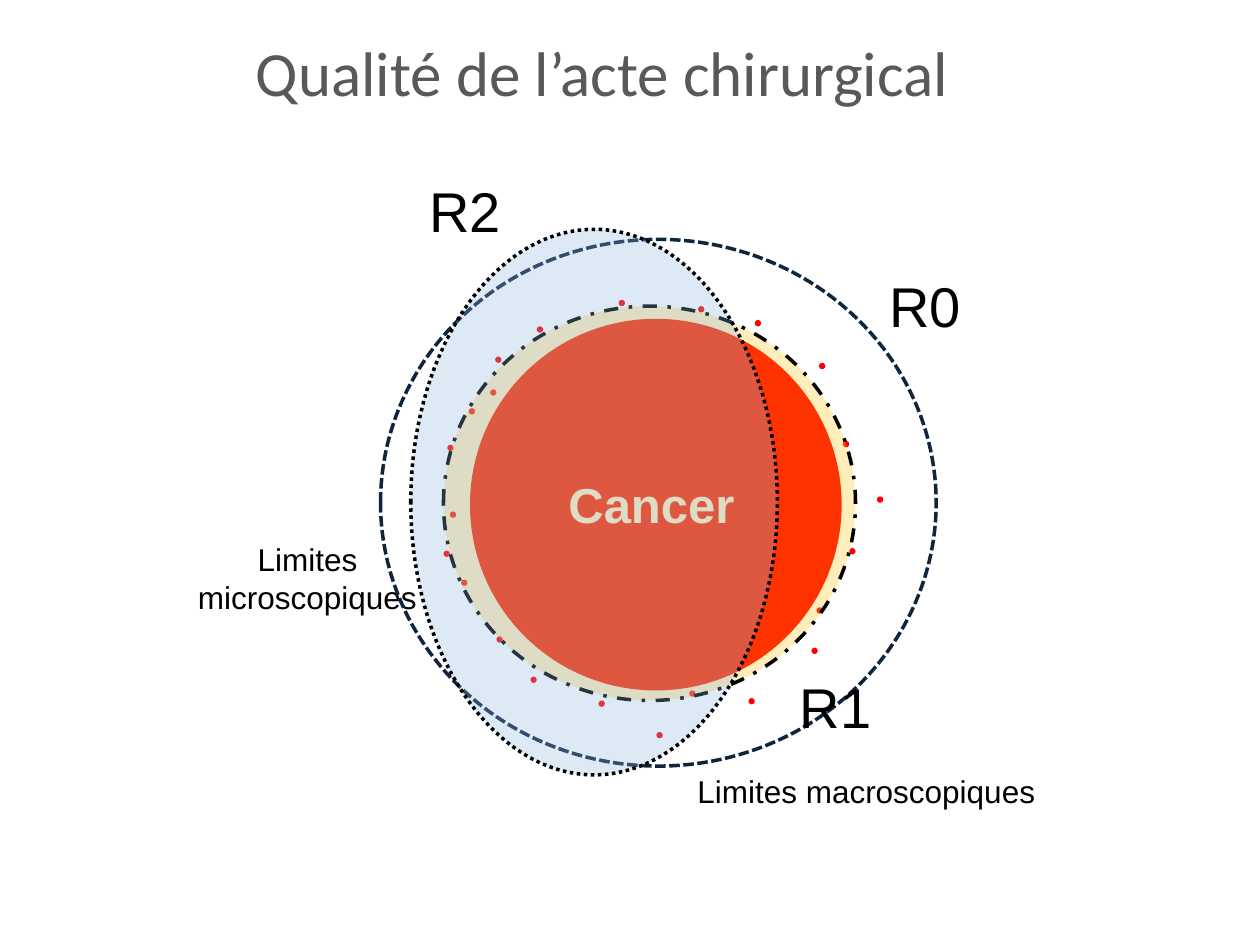
from lxml import etree
from pptx import Presentation
from pptx.dml.color import RGBColor
from pptx.enum.dml import MSO_LINE
from pptx.enum.shapes import MSO_SHAPE
from pptx.enum.text import MSO_ANCHOR, MSO_AUTO_SIZE, PP_ALIGN
from pptx.oxml.ns import qn
from pptx.util import Inches, Pt

PX_PER_INCH = 100
EMU_PER_PX = Inches(1) // PX_PER_INCH

BLACK = RGBColor(0x00, 0x00, 0x00)
WHITE = RGBColor(0xFF, 0xFF, 0xFF)
GREY = RGBColor(0x59, 0x59, 0x59)
RED = RGBColor(0xFF, 0x00, 0x00)
NAVY = RGBColor(0x0F, 0x24, 0x3E)
AMBER = RGBColor(0xFF, 0xC0, 0x00)
LIGHT_BLUE = RGBColor(0x8E, 0xB4, 0xE3)

CELL_SIZE = 5
# Left and top of each scattered tumour cell
CELLS = [
    (389, 309), (674, 435), (352, 437), (547, 548), (648, 482), (426, 259),
    (372, 324), (421, 537), (357, 406), (669, 350), (599, 254), (554, 243),
    (491, 238), (393, 283), (355, 353), (366, 460), (394, 505), (650, 288),
    (644, 514), (696, 394), (521, 581), (475, 556), (594, 554),
]


def px(*lengths):
    return [length * EMU_PER_PX for length in lengths]


def add_ellipse(shapes, box, fill=None, opacity=100, line=None, dash=None):
    ellipse = shapes.add_shape(MSO_SHAPE.OVAL, *px(*box))
    ellipse.shadow.inherit = False
    if fill is None:
        ellipse.fill.background()
    else:
        ellipse.fill.solid()
        ellipse.fill.fore_color.rgb = fill
        if opacity < 100:
            color = ellipse.fill._xPr.find(qn("a:solidFill"))[0]
            etree.SubElement(color, qn("a:alpha"), val=str(opacity * 1000))
    if line is None:
        ellipse.line.fill.background()
    else:
        ellipse.line.color.rgb = line
        ellipse.line.width = Pt(2)
        ellipse.line.dash_style = dash


def add_text(shapes, box, text, size, color=BLACK, font="Arial", bold=False,
             align=PP_ALIGN.CENTER, anchor=MSO_ANCHOR.TOP):
    frame = shapes.add_textbox(*px(*box)).text_frame
    frame.word_wrap = True
    frame.auto_size = MSO_AUTO_SIZE.NONE
    frame.vertical_anchor = anchor
    paragraph = frame.paragraphs[0]
    paragraph.text = text
    paragraph.alignment = align
    paragraph.font.name = font
    paragraph.font.size = Pt(size)
    paragraph.font.bold = bold
    paragraph.font.color.rgb = color


def add_microscopic_spread(slide):
    spread = slide.shapes.add_group_shape().shapes
    for left, top in CELLS:
        add_ellipse(spread, (left, top, CELL_SIZE, CELL_SIZE), RED)
    add_text(spread, (134, 424, 220, 71), "Limites microscopiques", 18)


def add_resection(slide, label, label_at, outline, **style):
    """Group a resection outline with its R grade."""
    resection = slide.shapes.add_group_shape().shapes
    add_ellipse(resection, outline, **style)
    add_text(resection, (*label_at, 87, 64), label, 32, align=PP_ALIGN.LEFT)


def main():
    presentation = Presentation()
    presentation.slide_width, presentation.slide_height = px(1000, 750)
    slide = presentation.slides.add_slide(presentation.slide_layouts[6])

    add_text(slide.shapes, (28, 13, 900, 87), "Qualité de l’acte chirurgical",
             36, GREY, "Calibri", anchor=MSO_ANCHOR.MIDDLE)
    add_ellipse(slide.shapes, (373, 253, 295, 295), RED)
    add_text(slide.shapes, (387, 372, 260, 57), "Cancer", 28, WHITE, bold=True)
    add_text(slide.shapes, (518, 608, 339, 40), "Limites macroscopiques", 18)
    add_microscopic_spread(slide)

    add_resection(slide, "R0", (696, 211), (302, 190, 441, 418),
                  line=NAVY, dash=MSO_LINE.SQUARE_DOT)
    add_resection(slide, "R1", (625, 529), (352, 243, 327, 313),
                  fill=AMBER, opacity=27, line=BLACK, dash=MSO_LINE.DASH_DOT)
    add_resection(slide, "R2", (331, 135), (326, 182, 291, 433),
                  fill=LIGHT_BLUE, opacity=29, line=BLACK,
                  dash=MSO_LINE.ROUND_DOT)

    presentation.save("out.pptx")


if __name__ == "__main__":
    main()
